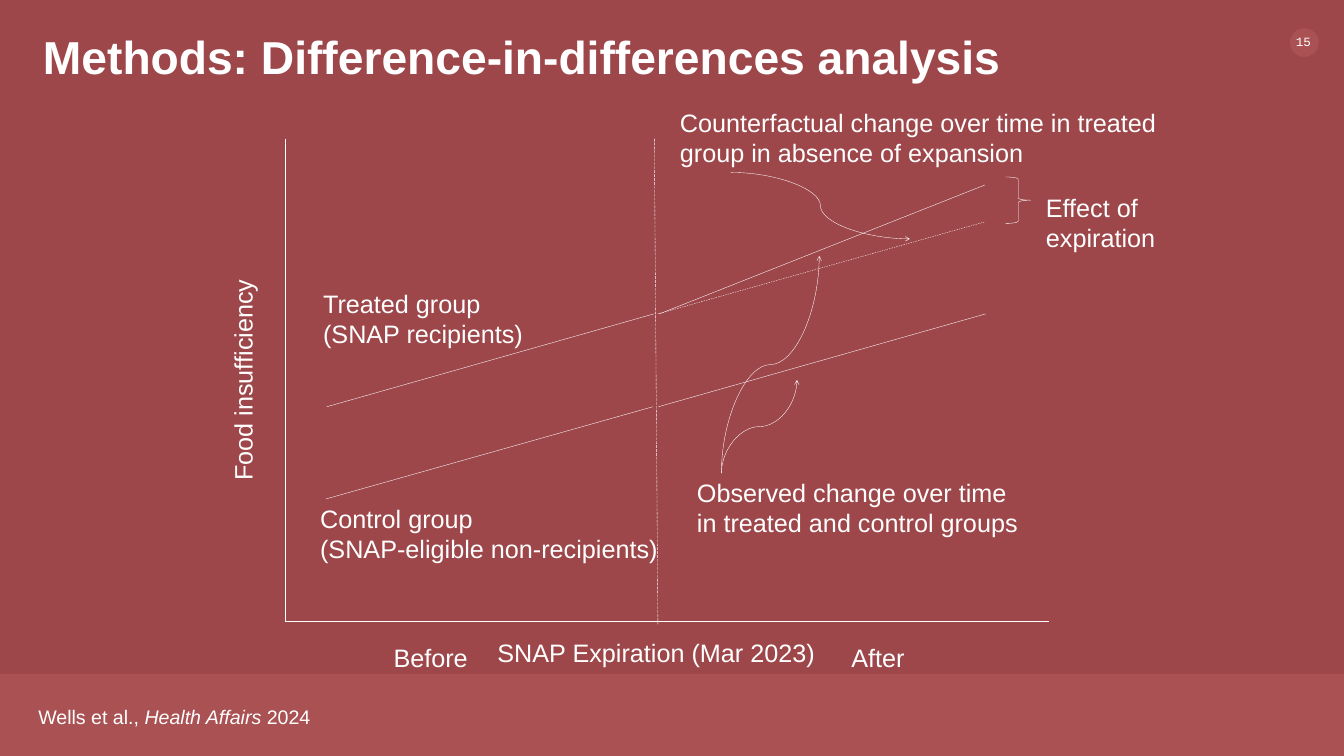
from lxml import etree
from pptx import Presentation
from pptx.dml.color import RGBColor
from pptx.enum.dml import MSO_LINE
from pptx.enum.shapes import MSO_CONNECTOR as CONN, MSO_SHAPE as SHAPE
from pptx.enum.text import MSO_ANCHOR, MSO_AUTO_SIZE, PP_ALIGN as ALIGN
from pptx.oxml.ns import qn
from pptx.util import Cm, Pt

BACK, ACCENT, WHITE = "9D474B", "B55A5A", "FFFFFF"


def paint(color_format, color):
    color_format.rgb = RGBColor.from_string(color)


def style(p, size, font="Arial", align=ALIGN.LEFT):
    p.alignment = align
    p.font.size = Pt(size)
    p.font.name = font
    paint(p.font.color, WHITE)


def add_panel(s, kind, x, y, w, h):
    sp = s.shapes.add_shape(kind, Cm(x), Cm(y), Cm(w), Cm(h))
    sp.shadow.inherit = False
    sp.line.fill.background()
    sp.fill.solid()
    paint(sp.fill.fore_color, ACCENT)
    color = sp.fill._xPr.find(qn("a:solidFill"))[0]
    etree.SubElement(color, qn("a:alpha")).set("val", "55000")


def add_label(s, text, x, y, w, h=1.8, size=36, wrap=False, **kw):
    sp = s.shapes.add_textbox(Cm(x), Cm(y), Cm(w), Cm(h))
    tf = sp.text_frame
    tf.word_wrap = wrap
    tf.text = text
    for p in tf.paragraphs:
        style(p, size, **kw)
    return sp


def add_line(s, x1, y1, x2, y2, dash=None, kind=CONN.STRAIGHT):
    c = s.shapes.add_connector(kind, Cm(x1), Cm(y1), Cm(x2), Cm(y2))
    c.line.width = Pt(0.5)
    paint(c.line.color, WHITE)
    if dash:
        c.line.dash_style = dash
    etree.SubElement(c._element.spPr, qn("a:effectLst"))
    return c


def add_curve(s, x1, y1, x2, y2, upright=False):
    if upright:
        cx, cy, dx, dy = (x1 + x2) / 2, (y1 + y2) / 2, (x2 - x1) / 2, (y2 - y1) / 2
        x1, y1, x2, y2 = cx - dy, cy + dx, cx + dy, cy - dx
    c = add_line(s, x1, y1, x2, y2, kind=CONN.CURVE)
    if upright:
        c._element.spPr.xfrm.set("rot", "5400000")
    etree.SubElement(c.line._get_or_add_ln(), qn("a:tailEnd")).set("type", "arrow")


def add_brace(s, x, y, w, h):
    sp = s.shapes.add_shape(SHAPE.RIGHT_BRACE, Cm(x), Cm(y), Cm(w), Cm(h))
    sp.shadow.inherit = False
    sp.fill.background()
    sp.line.width = Pt(0.5)
    paint(sp.line.color, WHITE)


def add_title(s, text):
    sp = s.shapes.title
    sp.left, sp.top, sp.width, sp.height = Cm(1.91), Cm(1.47), Cm(51.94), Cm(2.9)
    tf = sp.text_frame
    tf.text = text
    tf.auto_size = MSO_AUTO_SIZE.NONE
    tf.vertical_anchor = MSO_ANCHOR.BOTTOM
    p = tf.paragraphs[0]
    style(p, 66)
    p.font.bold = True
    p.line_spacing = 0.9


def add_frame(s):
    add_panel(s, SHAPE.RECTANGLE, 0, 33.96, 67.72, 4.14)
    add_panel(s, SHAPE.OVAL, 65, 1.42, 1.45, 1.45)
    number = add_label(s, "15", 64.67, 1.47, 2.79, 1.27, 18, font="Courier New")
    number.text_frame.margin_left = Cm(0.62)
    number.text_frame.margin_top = Cm(0.25)


def add_diagram(s):
    add_line(s, 14.35, 6.99, 14.35, 31.32)
    add_line(s, 14.35, 31.32, 52.86, 31.32)
    add_line(s, 32.97, 6.99, 33.15, 31.47, MSO_LINE.LONG_DASH)
    add_label(s, "SNAP Expiration (Mar 2023)", 24.05, 31.98, 18.03,
              wrap=True, align=ALIGN.CENTER)
    add_label(s, "Before", 19.58, 32.23, 4.29)
    add_label(s, "After", 42.65, 32.23, 3.23)
    add_label(s, "Food insufficiency", 6.86, 18.21, 10.74).rotation = 270

    add_line(s, 16.46, 20.5, 32.94, 15.82)
    add_line(s, 16.41, 25.15, 32.89, 20.5)
    add_line(s, 33.17, 20.5, 49.66, 15.82)
    add_line(s, 33.15, 15.82, 49.63, 11.18, MSO_LINE.DASH)
    add_line(s, 33.22, 15.82, 49.63, 9.32)

    add_label(s, "Treated group\n(SNAP recipients)", 16.03, 14.4, 10.85, 3.33)
    add_label(s, "Control group\n(SNAP-eligible non-recipients)", 15.88, 25.25, 17.68, 3.33)
    add_brace(s, 50.67, 8.92, 1.27, 2.34)
    add_label(s, "Effect of\nexpiration", 52.45, 9.58, 6.07, 3.33)
    add_label(s, "Observed change over time\nin treated and control groups",
              34.87, 23.93, 16.84, 3.33)
    add_curve(s, 36.35, 23.85, 41.28, 12.9, upright=True)
    add_curve(s, 36.35, 23.85, 40.16, 19.15, upright=True)
    add_label(s, "Counterfactual change over time in treated group in absence of expansion",
              34.01, 5.28, 25.88, 3.33, wrap=True)
    add_curve(s, 36.83, 8.69, 45.85, 12.04)


def add_citation(s):
    sp = add_label(s, "Wells et al., ", 1.68, 35.38, 14.38, 1.45, 28)
    p = sp.text_frame.paragraphs[0]
    for text, italic in (("Health Affairs ", True), ("2024", False)):
        r = p.add_run()
        r.text = text
        r.font.italic = italic


def main():
    prs = Presentation()
    prs.slide_width, prs.slide_height = Cm(67.72), Cm(38.1)
    s = prs.slides.add_slide(prs.slide_layouts[5])
    s.background.fill.solid()
    paint(s.background.fill.fore_color, BACK)
    add_frame(s)
    add_diagram(s)
    add_title(s, "Methods: Difference-in-differences analysis")
    add_citation(s)
    prs.save("out.pptx")


if __name__ == "__main__":
    main()
